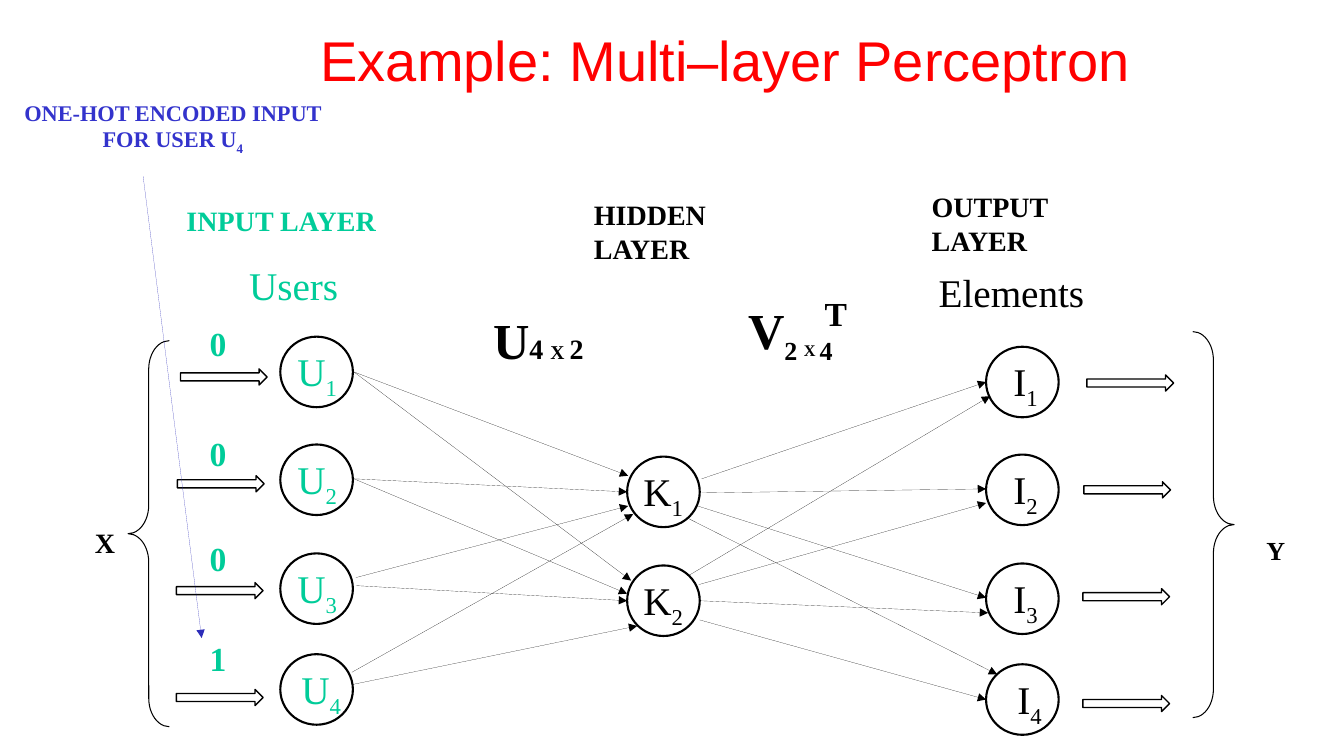
from pptx import Presentation
from pptx.dml.color import RGBColor
from pptx.enum.shapes import MSO_CONNECTOR, MSO_SHAPE
from pptx.enum.text import MSO_ANCHOR, MSO_AUTO_SIZE, PP_ALIGN
from pptx.oxml.ns import qn
from pptx.util import Inches, Pt
from lxml.etree import SubElement

COLUMN = ROW = Inches(1)
BLACK = RGBColor(0x00, 0x00, 0x00)
GREEN = RGBColor(0x00, 0xCC, 0x99)
BLUE = RGBColor(0x33, 0x33, 0xCC)
DARK_BLUE = RGBColor(0x2D, 0x2D, 0xB9)
RED = RGBColor(0xFF, 0x00, 0x00)
SERIF = "Times New Roman"

NODE_ROWS = (0, 1.07, 2.15, 3.15)
NODE_SHIFTS = (0, 0, 0, 0.04)
ARROW_STEP = 1.06
ARROW_SHIFTS = (0.04, 0.01, 0, 0)
DIGIT_ROWS = (0, 1.1, 2.14, 3.13)

INPUT_LINKS = [
    (3.51, 3.69, 6.23, 4.72), (3.51, 3.69, 6.26, 5.76),
    (3.51, 4.75, 6.22, 4.88), (3.51, 4.75, 6.22, 5.89),
    (3.53, 5.81, 6.22, 5.96), (3.53, 5.73, 6.23, 5.02),
    (3.49, 6.67, 6.28, 5.1), (3.5, 6.79, 6.32, 6.21),
]
OUTPUT_LINKS = [
    (6.96, 4.75, 9.78, 3.79), (6.96, 4.89, 9.78, 4.85),
    (6.82, 5.14, 9.89, 6.69), (6.92, 5.02, 9.78, 5.93),
    (6.94, 5.96, 9.8, 6.08), (6.93, 5.8, 9.78, 4.99),
    (6.94, 6.15, 9.78, 6.94), (6.83, 5.71, 9.82, 3.93),
]


def place(left, top, width, height):
    return (round(left * COLUMN), round(top * ROW),
            round(width * COLUMN), round(height * ROW))


def add_text(page, box, spans, color=BLACK, bold=True, font=SERIF,
             align=PP_ALIGN.LEFT, anchor=MSO_ANCHOR.TOP):
    frame = page.shapes.add_textbox(*place(*box)).text_frame
    frame.word_wrap = True
    frame.auto_size = MSO_AUTO_SIZE.SHAPE_TO_FIT_TEXT
    frame.vertical_anchor = anchor
    frame.margin_left = frame.margin_right = Inches(0.05)
    frame.margin_top = frame.margin_bottom = Inches(0.05)
    para = frame.paragraphs[0]
    para.alignment = align
    for text, size, *baseline in spans:
        span = para.add_run()
        span.text = text
        span.font.name = font
        span.font.size = Pt(size)
        span.font.bold = bold
        span.font.color.rgb = color
        if baseline:
            span.font._element.set("baseline", str(baseline[0] * 1000))


def add_outline(page, kind, box, width):
    shape = page.shapes.add_shape(kind, *place(*box))
    shape.shadow.inherit = False
    shape.fill.background()
    shape.line.color.rgb = BLACK
    shape.line.width = Pt(width)
    return shape


def add_link(page, ends, color=BLACK):
    link = page.shapes.add_connector(MSO_CONNECTOR.STRAIGHT, *place(*ends))
    link.line.color.rgb = color
    SubElement(link.line._get_or_add_ln(), qn("a:tailEnd"), type="triangle")
    SubElement(link._element.spPr, qn("a:effectLst"))
    link._element.remove(link._element.find(qn("p:style")))


def add_layer(page, left, top, letters, inset, color=BLACK, rows=NODE_ROWS):
    nodes = zip(letters, rows, NODE_SHIFTS)
    for number, (letter, row, shift) in enumerate(nodes, 1):
        add_outline(page, MSO_SHAPE.OVAL, (left, top + row, 0.72, 0.7), 1.5)
        add_text(page, (left + inset + shift, top + row + 0.06, 0.62, 0.6),
                 [(letter, 28), (str(number), 28, -25)], color, False)


def add_arrows(page, left, top):
    for index, shift in enumerate(ARROW_SHIFTS):
        box = (left + shift, top + index * ARROW_STEP, 0.86, 0.16)
        add_outline(page, MSO_SHAPE.RIGHT_ARROW, box, 1)


def add_digits(page, left, top, digits):
    for digit, row in zip(digits, DIGIT_ROWS):
        add_text(page, (left, top + row, 0.8, 0.46), [(digit, 24)], GREEN)


def add_brace(page, kind, left, top):
    brace = add_outline(page, kind, (left, top, 0.41, 3.83), 0.75)
    brace.adjustments[0] = 0.69
    brace.adjustments[1] = 0.5


def add_headings(page):
    add_text(page, (1.24, 0.26, 11.9, 0.71),
             [("Example: Multi–layer Perceptron", 40)], RED, False, "Arial",
             PP_ALIGN.CENTER, MSO_ANCHOR.BOTTOM)
    add_text(page, (0.16, 0.93, 3.11, 0.63),
             [("ONE-HOT ENCODED INPUT FOR USER U", 16), ("4", 16, -25)],
             BLUE, align=PP_ALIGN.CENTER)
    add_text(page, (1.8, 1.97, 3.23, 0.41), [("INPUT LAYER", 20)], GREEN)
    add_text(page, (5.84, 1.91, 1.86, 0.73), [("HIDDEN LAYER", 20)])
    add_text(page, (9.19, 1.83, 1.93, 0.73), [("OUTPUT LAYER", 20)])
    add_text(page, (2.42, 2.54, 1.57, 0.53), [("Users", 28)], GREEN, False)
    add_text(page, (9.26, 2.61, 1.86, 0.53), [("Elements", 28)], BLACK, False)


def add_matrices(page):
    add_text(page, (4.84, 3.02, 1.14, 0.66),
             [("U", 36), ("4 ", 20), ("X ", 14), ("2", 20)])
    add_text(page, (7.37, 2.92, 1.34, 0.73),
             [("V", 36), ("2 ", 32, -25), ("X ", 20, -25), ("4", 32, -25)])
    add_text(page, (8.13, 2.86, 0.27, 0.46), [("T", 24)])


def add_perceptron(page):
    add_layer(page, 2.78, 3.34, "UUUU", 0.12, GREEN)
    add_layer(page, 6.22, 3.46, "ΚΚ", 0.11, rows=NODE_ROWS[1:3])
    add_layer(page, 9.78, 3.44, "ΙIII", 0.22)
    for ends in INPUT_LINKS + OUTPUT_LINKS:
        add_link(page, ends)
    add_arrows(page, 1.75, 3.66)
    add_arrows(page, 10.74, 3.72)
    add_digits(page, 2.03, 3.15, "0001")
    add_brace(page, MSO_SHAPE.LEFT_BRACE, 1.27, 3.38)
    add_brace(page, MSO_SHAPE.RIGHT_BRACE, 11.83, 3.29)
    add_text(page, (0.89, 5.16, 0.48, 0.41), [("X", 20)])
    add_text(page, (12.51, 4.96, 0.48, 0.68), [("Y", 32, -25)])
    add_link(page, (1.42, 1.75, 2, 6.33), DARK_BLUE)


def main():
    deck = Presentation()
    deck.slide_width, deck.slide_height = Inches(13.33), Inches(7.5)
    page = deck.slides.add_slide(deck.slide_layouts[6])
    add_perceptron(page)
    add_matrices(page)
    add_headings(page)
    deck.save("out.pptx")


if __name__ == "__main__":
    main()
